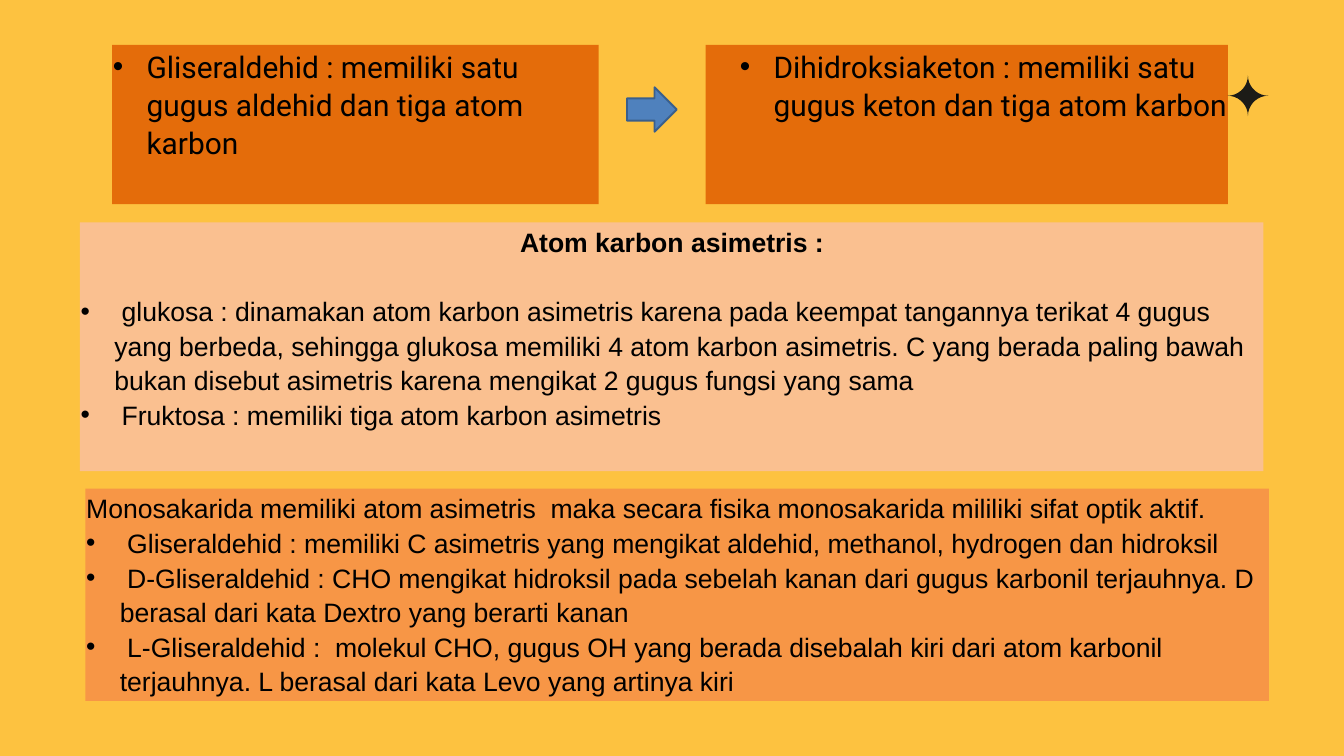
"""Build the slide on asymmetric carbon atoms in monosaccharides."""
from math import cos, pi, sin

from lxml import etree
from pptx import Presentation
from pptx import util as u
from pptx.dml.color import RGBColor
from pptx.enum import shapes, text
from pptx.oxml.ns import qn

GOLD = RGBColor(0xFD, 0xC2, 0x40)
PEACH = RGBColor(0xFA, 0xC0, 0x90)
AMBER = RGBColor(0xF7, 0x96, 0x46)
RUST = RGBColor(0xE4, 0x6C, 0x0A)
BLUE = RGBColor(0x4F, 0x81, 0xBD)
NAVY = RGBColor(0x3A, 0x5F, 0x8C)
INK = RGBColor(0x1C, 0x1B, 0x17)
BLACK = RGBColor(0, 0, 0)

HANG = 1.27
TITLE = "Atom karbon asimetris :"
LEFT = ["Gliseraldehid : memiliki satu gugus aldehid dan tiga atom karbon"]
RIGHT = ["Dihidroksiaketon : memiliki satu gugus keton dan tiga atom karbon"]
SUGARS = [
    " glukosa : dinamakan atom karbon asimetris karena pada keempat tangannya "
    "terikat 4 gugus yang berbeda, sehingga glukosa memiliki 4 atom karbon "
    "asimetris. C yang berada paling bawah bukan disebut asimetris karena "
    "mengikat 2 gugus fungsi yang sama",
    " Fruktosa : memiliki tiga atom karbon asimetris",
]
INTRO = ("Monosakarida memiliki atom asimetris  maka secara fisika "
         "monosakarida mililiki sifat optik aktif.")
OPTICS = [
    " Gliseraldehid : memiliki C asimetris yang mengikat aldehid, methanol, "
    "hydrogen dan hidroksil",
    " D-Gliseraldehid : CHO mengikat hidroksil pada sebelah kanan dari gugus "
    "karbonil terjauhnya. D berasal dari kata Dextro yang berarti kanan",
    " L-Gliseraldehid :  molekul CHO, gugus OH yang berada disebalah kiri dari "
    "atom karbonil terjauhnya. L berasal dari kata Levo yang artinya kiri",
]
BOXES = [
    (1, (4.24, 1.7, 18.39, 6.02), RUST, "", LEFT, dict(size=32, font="Roboto")),
    (2, (26.67, 1.7, 19.74, 6.02), RUST, "", RIGHT,
     dict(size=32, font="Roboto", edge=HANG)),
    (3, (3.02, 11.05, 44.73, 6.76), None, "", SUGARS, {}),
    (4, (3.23, 18.47, 44.73, 8.03), AMBER, INTRO, OPTICS, {}),
]
PANEL = (3.02, 8.41, 44.73, 9.4)
ARROW = (23.7, 3.3, 1.88, 1.68)
STAR = (47.17, 3.62, 0.77)


def place(box, spot, fill):
    """Move a placeholder and set its fill and text frame."""
    box.left, box.top, box.width, box.height = map(u.Cm, spot)
    if fill is None:
        box.fill.background()
    else:
        box.fill.solid()
        box.fill.fore_color.rgb = fill
    frame = box.text_frame
    frame.word_wrap = True
    frame.auto_size = text.MSO_AUTO_SIZE.NONE
    frame.vertical_anchor = text.MSO_ANCHOR.TOP
    frame.margin_left = frame.margin_right = frame.margin_bottom = 0
    frame.margin_top = u.Cm(0.03)


def write(frame, words, first=False, size=28.5, font="Arial", bold=False,
          align=text.PP_ALIGN.LEFT, bullet=False, edge=0):
    """Write one formatted paragraph into a text frame."""
    para = frame.paragraphs[0] if first else frame.add_paragraph()
    props = para._p.get_or_add_pPr()
    hang = HANG if bullet else 0
    props.set("marL", str(u.Cm(edge + hang + 0.03)))
    props.set("indent", str(u.Cm(-hang)))
    if bullet:
        etree.SubElement(props, qn("a:buFont")).set("typeface", "Arial")
        etree.SubElement(props, qn("a:buChar")).set("char", "•")
    else:
        etree.SubElement(props, qn("a:buNone"))
    para.alignment = align
    para.line_spacing = 1.07
    para.space_before = u.Pt(0 if first else 0.9)
    para.space_after = u.Pt(0)
    run = para.add_run()
    run.text = words
    run.font.size, run.font.name, run.font.bold = u.Pt(size), font, bold
    run.font.color.rgb = BLACK


def draw_star(slide, x, y, rad, steps=9):
    """Draw a four-pointed star whose sides are quarter arcs."""
    points = []
    for turn in range(4):
        base = turn * pi / 2
        hub = (rad * (cos(base) - sin(base)), rad * (sin(base) + cos(base)))
        for step in range(steps):
            angle = base - pi / 2 - step * pi / 2 / steps
            points.append((u.Cm(x + hub[0] + rad * cos(angle)),
                           u.Cm(y + hub[1] + rad * sin(angle))))
    build = slide.shapes.build_freeform(*points[0])
    build.add_line_segments(points[1:], close=True)
    star = build.convert_to_shape()
    star.shadow.inherit = False
    star.fill.solid()
    star.fill.fore_color.rgb = INK
    star.line.fill.background()


def main():
    deck = Presentation()
    deck.slide_width, deck.slide_height = u.Cm(50.8), u.Cm(28.58)
    slide = deck.slides.add_slide(deck.slide_layouts.get_by_name("Comparison"))
    slide.background.fill.solid()
    slide.background.fill.fore_color.rgb = GOLD

    head = slide.shapes.title
    place(head, PANEL, PEACH)
    write(head.text_frame, TITLE, first=True, bold=True,
          align=text.PP_ALIGN.CENTER)

    holds = {hold.placeholder_format.idx: hold for hold in slide.placeholders}
    for key, spot, fill, intro, items, style in BOXES:
        place(holds[key], spot, fill)
        frame = holds[key].text_frame
        if intro:
            write(frame, intro, first=True, **style)
        for num, item in enumerate(items):
            write(frame, item, first=not intro and num == 0, bullet=True, **style)

    arrow = slide.shapes.add_shape(shapes.MSO_SHAPE.RIGHT_ARROW,
                                   *map(u.Cm, ARROW))
    arrow.shadow.inherit = False
    arrow.fill.solid()
    arrow.fill.fore_color.rgb = BLUE
    arrow.line.color.rgb = NAVY
    arrow.line.width = u.Pt(2)
    draw_star(slide, *STAR)
    deck.save("out.pptx")


if __name__ == "__main__":
    main()
